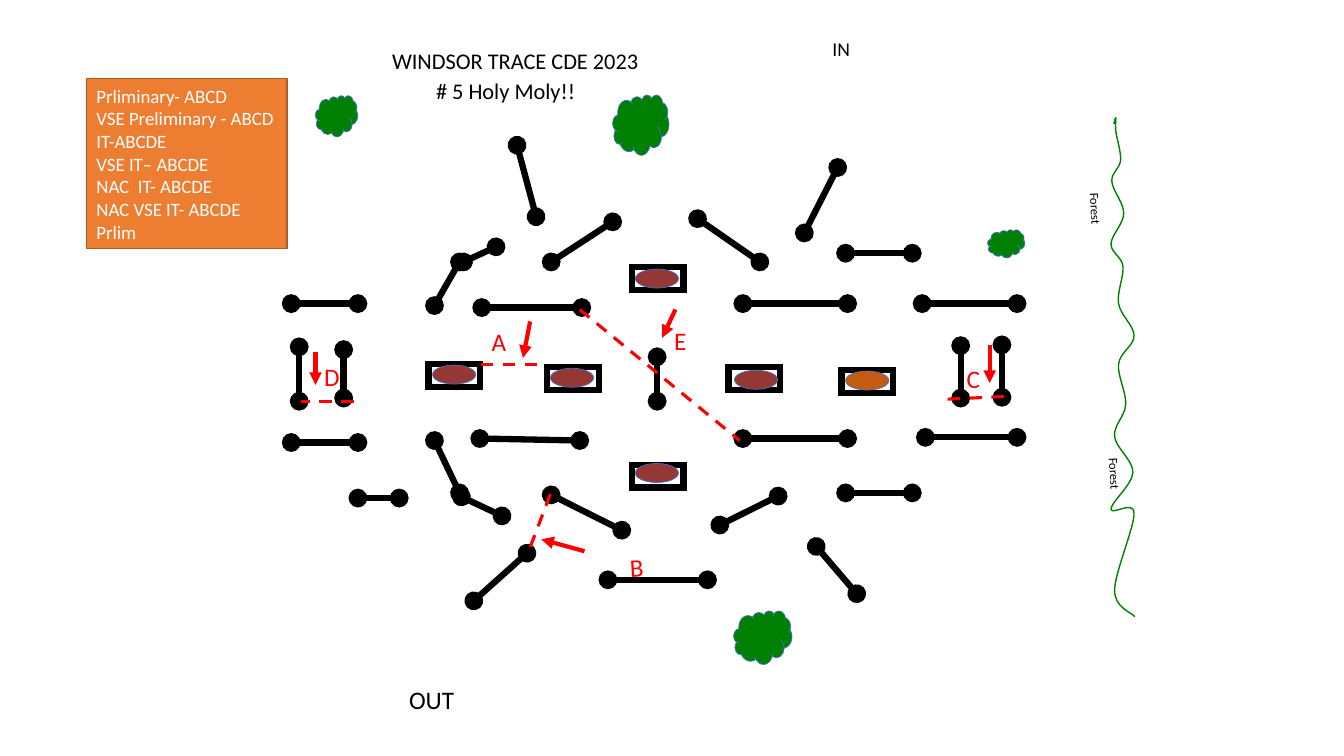
from collections import namedtuple

from lxml.etree import SubElement
from pptx import Presentation
from pptx.dml.color import RGBColor
from pptx.enum.dml import MSO_LINE_DASH_STYLE as Dash
from pptx.enum.shapes import MSO_CONNECTOR_TYPE as Connector, MSO_SHAPE as Preset
from pptx.enum.text import MSO_ANCHOR as Anchor, MSO_AUTO_SIZE as AutoSize, PP_ALIGN as Align
from pptx.oxml.ns import qn
from pptx.util import Cm, Pt

BLACK = RGBColor(0x00, 0x00, 0x00)
WHITE = RGBColor(0xFF, 0xFF, 0xFF)
RED = RGBColor(0xFF, 0x00, 0x00)
GREEN = RGBColor(0x00, 0x80, 0x00)
BLUE = RGBColor(0x44, 0x72, 0xC4)
MAROON = RGBColor(0x95, 0x37, 0x35)
RUST = RGBColor(0xC5, 0x5A, 0x11)
ORANGE = RGBColor(0xED, 0x7D, 0x31)
BROWN = RGBColor(0xAF, 0x5C, 0x24)

Box = namedtuple("Box", "left top width height")

PANELS = [
    (0.34, 4.15, 2.02, 4.15), (0.34, 7.65, 2.02, 7.65), (1.66, 5.31, 1.66, 6.53),
    (6.89, 3.1, 8.44, 2.09), (10.58, 2.01, 12.15, 3.1), (11.72, 4.15, 14.36, 4.15),
    (11.72, 7.55, 14.36, 7.55), (2.02, 9.05, 3.06, 9.05), (11.14, 9.73, 12.61, 9),
    (6.89, 8.97, 8.67, 9.86), (8.32, 11.11, 10.83, 11.11), (5.09, 7.55, 7.61, 7.6),
    (9.56, 5.49, 9.56, 6.61), (16.32, 7.52, 18.63, 7.52), (16.24, 4.15, 18.63, 4.15),
    (17.21, 5.21, 17.21, 6.53), (5.14, 4.25, 7.66, 4.25), (14.31, 8.92, 15.99, 8.92),
    (14.31, 2.88, 15.99, 2.88), (3.95, 4.2, 4.58, 3.1), (3.95, 7.6, 4.58, 8.92),
    (0.54, 6.61, 0.54, 5.24), (4.68, 3.1, 5.5, 2.72), (4.63, 9.02, 5.65, 9.5),
    (18.25, 5.19, 18.25, 6.51), (4.94, 11.64, 6.28, 10.44), (13.57, 10.27, 14.59, 11.46),
    (13.27, 2.37, 14.11, 0.72), (6.51, 1.96, 6.03, 0.16),
]
BARRELS = [
    (8.93, 8.21, 0.08, -0.03, MAROON), (14.21, 5.82, 0.1, 0.03, RUST),
    (3.8, 5.67, 0.1, 0.03, MAROON), (11.36, 5.75, 0.15, 0.08, MAROON),
    (8.93, 3.23, 0.08, 0.05, MAROON), (6.79, 5.75, 0.08, 0.03, MAROON),
]
GATES = [
    (5.12, 5.69, 6.64, 5.69), (6.87, 8.95, 6.36, 10.29), (16.88, 6.56, 18.53, 6.48),
    (1.92, 6.61, 0.59, 6.61), (7.61, 4.3, 11.64, 7.6),
]
ARROWS = [
    (10.02, 4.3, 9.69, 5.01), (0.95, 5.36, 0.95, 6.2), (17.94, 5.19, 17.94, 6.15),
    (7.73, 10.39, 6.64, 10.09), (6.36, 4.6, 6.18, 5.52),
]
LETTERS = [
    ("A", 5.14, 4.6, 0.94, True, 0), ("B", 8.62, 10.29, 0.94, True, -3.6),
    ("C", 17.23, 5.54, 0.38, True, 0), ("D", 0.92, 5.47, 1.42, True, 0),
    ("E", 9.74, 4.58, 0.81, False, 0),
]
TREES = [
    (7.95, 2.41, 1.07, 1.04), (15.44, 2.39, 1.42, 1.52),
    (18.49, 15.39, 1.47, 1.35), (24.89, 5.79, 0.94, 0.71),
]
SIGNS = [
    ("WINDSOR TRACE CDE 2023", Box(9.63, 1.07, 6.81, 0.94), 16),
    ("# 5 Holy Moly!!", Box(10.74, 1.83, 4.06, 0.94), 16),
    ("IN", Box(20.73, 0.81, 0.97, 0.86), 14),
    ("OUT", Box(10.06, 17.12, 1.65, 1.02), 18),
]
DIVISIONS = [
    "Prliminary- ABCD", "VSE Preliminary - ABCD", "IT-ABCDE", "VSE IT– ABCDE",
    "NAC  IT- ABCDE", "NAC VSE IT- ABCDE", "Prlim",
]
FOREST_EDGE = [
    (0.07, 0.15), (0.12, 0), (0.12, 0.33), (0.24, 1.07), (0.02, 1.6), (0.32, 2.41),
    (0, 3.18), (0.3, 3.74), (0.19, 4.68), (0.58, 5.49), (0.19, 6.2), (0.37, 7.22),
    (0.09, 8.03), (0.55, 8.94), (0, 9.86), (0.58, 9.96), (0.09, 11.91), (0.6, 12.57),
]


def add_preset(page, preset, box, fill, line, weight):
    shape = page.shapes.add_shape(preset, *map(Cm, box))
    shape.shadow.inherit = False
    shape.fill.solid()
    shape.fill.fore_color.rgb = fill
    shape.line.color.rgb = line
    shape.line.width = Pt(weight)
    return shape


def write_lines(shape, lines, size, color, wrap=False):
    frame = shape.text_frame
    frame_format = {"word_wrap": wrap, "auto_size": AutoSize.SHAPE_TO_FIT_TEXT}
    for name, value in frame_format.items():
        setattr(frame, name, value)
    for index, line in enumerate(lines):
        para = frame.add_paragraph() if index else frame.paragraphs[0]
        para.alignment = Align.LEFT
        span = para.add_run()
        span.text = line
        for name, value in {"name": "Calibri", "size": Pt(size)}.items():
            setattr(span.font, name, value)
        span.font.color.rgb = color


def add_label(page, text, box, size, color=BLACK, wrap=False, rotation=0):
    label = page.shapes.add_textbox(*map(Cm, box))
    label.rotation = rotation
    write_lines(label, [text], size, color, wrap)


def add_rail(page, box, ends, color, weight, dash=None, head=None, tail=None):
    """Draw a straight line whose ends are measured from the box corner."""
    x1, y1, x2, y2 = ends
    rail = page.shapes.add_connector(
        Connector.STRAIGHT, Cm(box.left + x1), Cm(box.top + y1),
        Cm(box.left + x2), Cm(box.top + y2))
    rail.line.color.rgb = color
    rail.line.width = Pt(weight)
    if dash:
        rail.line.dash_style = dash
    outline = rail.line._get_or_add_ln()
    for tag, kind in (("a:headEnd", head), ("a:tailEnd", tail)):
        if kind:
            SubElement(outline, qn(tag), type=kind)
    SubElement(rail._element.spPr, qn("a:effectLst"))


def draw_course(page, box):
    for x, y, inset_x, inset_y, color in BARRELS:
        left, top = box.left + x, box.top + y
        frame = add_preset(page, Preset.RECTANGLE, Box(left, top, 1.3, 0.58),
                           WHITE, BLACK, 4.5)
        SubElement(frame.line._get_or_add_ln(), qn("a:miter"), lim="800000")
        add_preset(page, Preset.OVAL, Box(left + inset_x, top + inset_y, 1.09, 0.48),
                   color, BLUE, 0.5)
    for ends in PANELS:
        add_rail(page, box, ends, BLACK, 4.5, head="oval", tail="oval")
    for text, x, y, width, wrap, rotation in LETTERS:
        add_label(page, text, Box(box.left + x, box.top + y, width, 1.02), 18, RED,
                  wrap, rotation)
    for ends in GATES:
        add_rail(page, box, ends, RED, 2.25, dash=Dash.DASH)
    for ends in ARROWS:
        add_rail(page, box, ends, RED, 3, tail="triangle")


def smooth_outline(shape):
    """Turn the straight segments of a freeform into curves through its points."""
    knots = [(int(p.get("x")), int(p.get("y"))) for p in shape._element.iter(qn("a:pt"))]
    padded = [knots[0], *knots, knots[-1]]
    segments = list(shape._element.iter(qn("a:lnTo")))
    for segment, before, start, end, after in zip(
            segments, padded, padded[1:], padded[2:], padded[3:]):
        leave = [b + (c - a) / 6 for a, b, c in zip(before, start, end)]
        arrive = [c - (d - b) / 6 for b, c, d in zip(start, end, after)]
        segment.tag = qn("a:cubicBezTo")
        for index, (x, y) in enumerate((leave, arrive)):
            handle = SubElement(segment, qn("a:pt"), x=str(round(x)), y=str(round(y)))
            segment.insert(index, handle)


def draw_forest(page, box):
    edge_points = [(Cm(box.left + 1.1 + x), Cm(box.top + y)) for x, y in FOREST_EDGE]
    builder = page.shapes.build_freeform(*edge_points[0])
    builder.add_line_segments(edge_points[1:], close=False)
    edge = builder.convert_to_shape()
    smooth_outline(edge)
    edge.shadow.inherit = False
    edge.fill.background()
    edge.line.color.rgb = GREEN
    edge.line.width = Pt(1)
    for x, y in ((0.05, 1.98), (0.53, 8.66)):
        add_label(page, "Forest", Box(box.left + x, box.top + y, 1.32, 0.64), 9,
                  rotation=87.1)


def draw_divisions(page, box):
    panel = add_preset(page, Preset.RECTANGLE, box, ORANGE, BROWN, 1)
    panel.text_frame.vertical_anchor = Anchor.MIDDLE
    write_lines(panel, DIVISIONS, 13.5, WHITE)


def draw_surroundings(page, box):
    for x, y, width, height in TREES:
        add_preset(page, Preset.CLOUD, Box(box.left + x, box.top + y, width, height),
                   GREEN, BLUE, 0.5)
    for text, sign, size in SIGNS:
        spot = sign._replace(left=box.left + sign.left, top=box.top + sign.top)
        add_label(page, text, spot, size)


def main():
    deck = Presentation()
    deck.slide_width, deck.slide_height = Cm(33.87), Cm(19.05)
    page = deck.slides.add_slide(deck.slide_layouts[6])
    draw_course(page, Box(7, 3.5, 19, 12))
    draw_forest(page, Box(26.9, 2.97, 1.7, 12.57))
    draw_surroundings(page, Box(0, 0, 33.87, 19.05))
    draw_divisions(page, Box(2.18, 1.98, 5.05, 4.29))
    deck.save("out.pptx")


if __name__ == "__main__":
    main()
